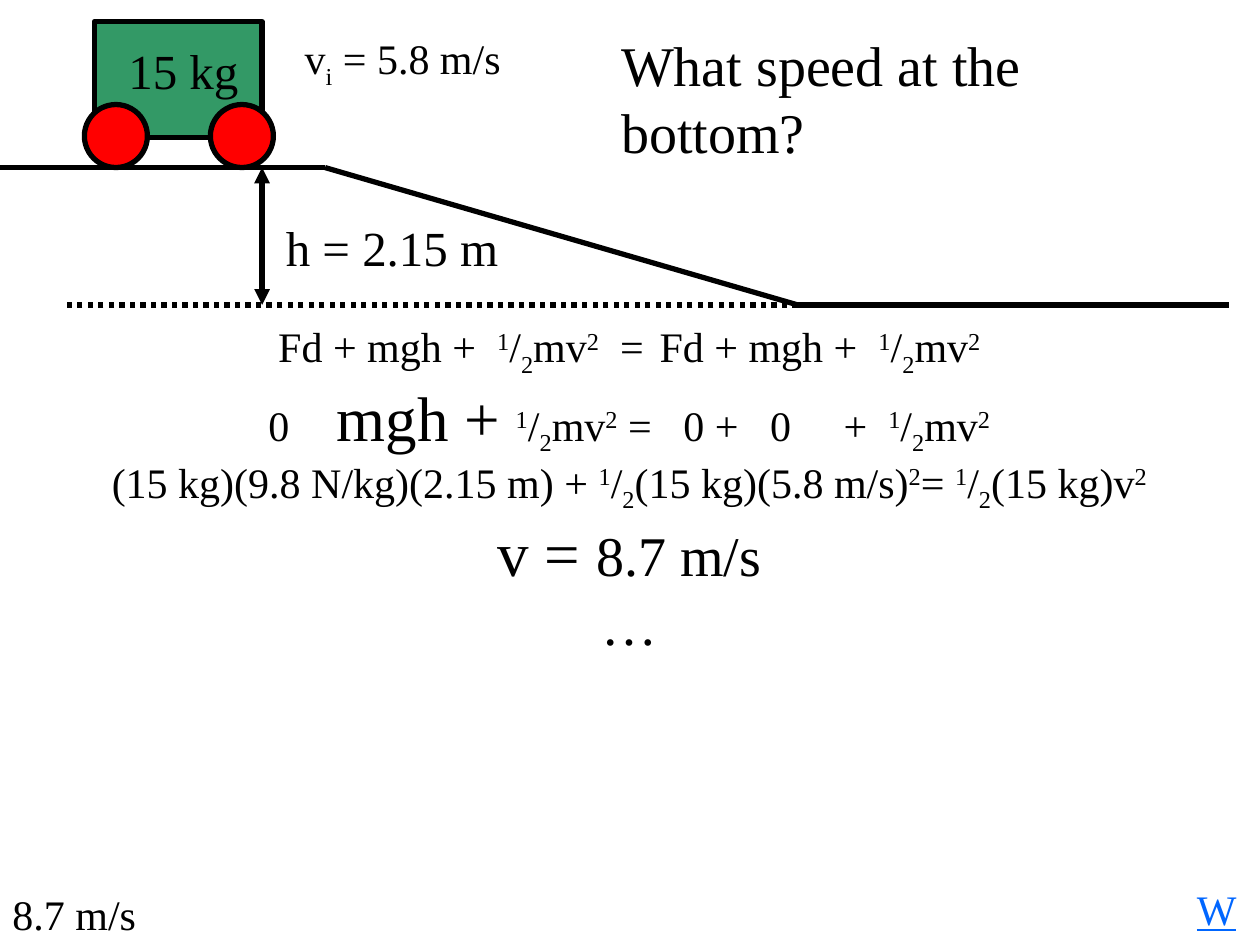
from pptx import Presentation
from pptx.dml.color import RGBColor
from pptx.enum.dml import MSO_LINE
from pptx.enum.shapes import MSO_CONNECTOR, MSO_SHAPE
from pptx.enum.text import MSO_ANCHOR, MSO_AUTO_SIZE, PP_ALIGN
from pptx.oxml.ns import qn
from pptx.util import Inches, Pt
from lxml.etree import SubElement

COLORS = {"ink": "000000", "cart": "339966", "wheel": "FF0000", "link": "0066FF"}
FONT = "Times New Roman"
SPACE_EM = 0.25  # width of a space in this font
BASELINES = {"^": "30000", "_": "-25000"}
GAP_SIZES = {"~": 24, "#": 36}
HALF = "|^1|/|_2|"
SQUARED = "|^2"
ENERGY = f"Fd + mgh +|~2{HALF}mv{SQUARED}"

# Text, size of the paragraph
WORKING = [
    (f"{ENERGY}|~2|=|#1|{ENERGY}", 24),
    (f"0|~3|+ mgh + {HALF}mv{SQUARED}| =|#2|0 +|~3|0|~5|+|~2{HALF}mv{SQUARED}", 24),
    (f"(15 kg)(9.8 N/kg)(2.15 m) + {HALF}(15 kg)(5.8 m/s){SQUARED}|= "
     f"{HALF}(15 kg)v{SQUARED}", 24),
    ("+v = |8.7 m/s", 32),
    ("…", 32),
]


def rgb(name):
    return RGBColor.from_string(COLORS[name])


def add_runs(p, text):
    """Split text at |; ^ raises, _ lowers, + enlarges, ~n and #n are wide gaps."""
    for piece in text.split("|"):
        mark, rest = piece[0], piece[1:]
        r = p.add_run()
        if mark in BASELINES:
            r.text = rest
            r._r.get_or_add_rPr().set("baseline", BASELINES[mark])
        elif mark in GAP_SIZES:
            r.text = " "
            size = GAP_SIZES[mark]
            r.font.size = Pt(size)
            extra = (int(rest) - 1) * size * SPACE_EM
            r._r.get_or_add_rPr().set("spc", str(int(extra * 100)))
        elif mark == "+" and rest:
            r.text = rest
            r.font.size = Pt(36)
        else:
            r.text = piece


def write(p, text, size, color="ink", align=PP_ALIGN.LEFT):
    p.alignment = align
    p.font.name = FONT
    p.font.size = Pt(size)
    p.font.color.rgb = rgb(color)
    add_runs(p, text)


def add_label(slide, box, text, size, color="ink"):
    tf = slide.shapes.add_textbox(*map(Inches, box)).text_frame
    tf.word_wrap = False
    write(tf.paragraphs[0], text, size, color)
    return tf.paragraphs[0]


def add_title(slide, box, text):
    sp = slide.shapes.title
    sp.left, sp.top, sp.width, sp.height = map(Inches, box)
    tf = sp.text_frame
    tf.word_wrap = False
    tf.auto_size = MSO_AUTO_SIZE.NONE
    tf.vertical_anchor = MSO_ANCHOR.TOP
    write(tf.paragraphs[0], text, 32)


def add_working(slide, box):
    tf = slide.shapes.add_textbox(*map(Inches, box)).text_frame
    tf.word_wrap = True
    for i, (text, size) in enumerate(WORKING):
        p = tf.add_paragraph() if i else tf.paragraphs[0]
        write(p, text, size, align=PP_ALIGN.CENTER)


def add_part(group, kind, box, color):
    sp = group.shapes.add_shape(kind, *map(Inches, box))
    sp.shadow.inherit = False
    sp.fill.solid()
    sp.fill.fore_color.rgb = rgb(color)
    sp.line.color.rgb = rgb("ink")
    sp.line.width = Pt(3)


def add_cart(slide):
    group = slide.shapes.add_group_shape()
    add_part(group, MSO_SHAPE.RECTANGLE, (0.75, 0.17, 1.33, 0.92), "cart")
    for left in (0.67, 1.67):
        add_part(group, MSO_SHAPE.OVAL, (left, 0.83, 0.5, 0.5), "wheel")


def add_line(slide, start, end, dash=None, arrows=False):
    line = slide.shapes.add_connector(
        MSO_CONNECTOR.STRAIGHT, *map(Inches, start + end))
    line.line.color.rgb = rgb("ink")
    line.line.width = Pt(3)
    if dash:
        line.line.dash_style = dash
    if arrows:
        ln = line.line._get_or_add_ln()
        for tag in ("a:headEnd", "a:tailEnd"):
            SubElement(ln, qn(tag), type="triangle")
    SubElement(line._element.spPr, qn("a:effectLst"))


def add_track(slide):
    upper, lower = 1.33, 2.42
    crest, foot = (2.58, upper), (6.33, lower)
    track = [(0, upper), crest, foot, (9.75, lower)]
    for start, end in zip(track, track[1:]):
        add_line(slide, start, end)
    add_line(slide, foot, (0.5, lower), dash=MSO_LINE.ROUND_DOT)
    add_line(slide, (2.08, upper), (2.08, lower), arrows=True)


def main():
    prs = Presentation()
    prs.slide_width, prs.slide_height = Inches(10), Inches(7.5)
    slide = prs.slides.add_slide(prs.slide_layouts[5])

    add_title(slide, (4.83, 0.19, 4.94, 0.63), "What speed at the bottom?")
    add_working(slide, (0.33, 2.33, 9.33, 2.84))
    add_cart(slide)
    add_track(slide)
    add_label(slide, (2.32, 0.21, 1.77, 0.5), "v|_i| = 5.8 m/s", 24)
    add_label(slide, (2.17, 1.68, 1.89, 0.57), "h = 2.15 m", 28)
    add_label(slide, (0.92, 0.27, 1.08, 0.57), "15 kg", 28)
    add_label(slide, (0, 7, 1.18, 0.5), "8.7 m/s", 24)
    add_label(slide, (9.4, 6.96, 0.52, 0.5), "W", 24, "link").font.underline = True

    prs.save("out.pptx")


if __name__ == "__main__":
    main()
